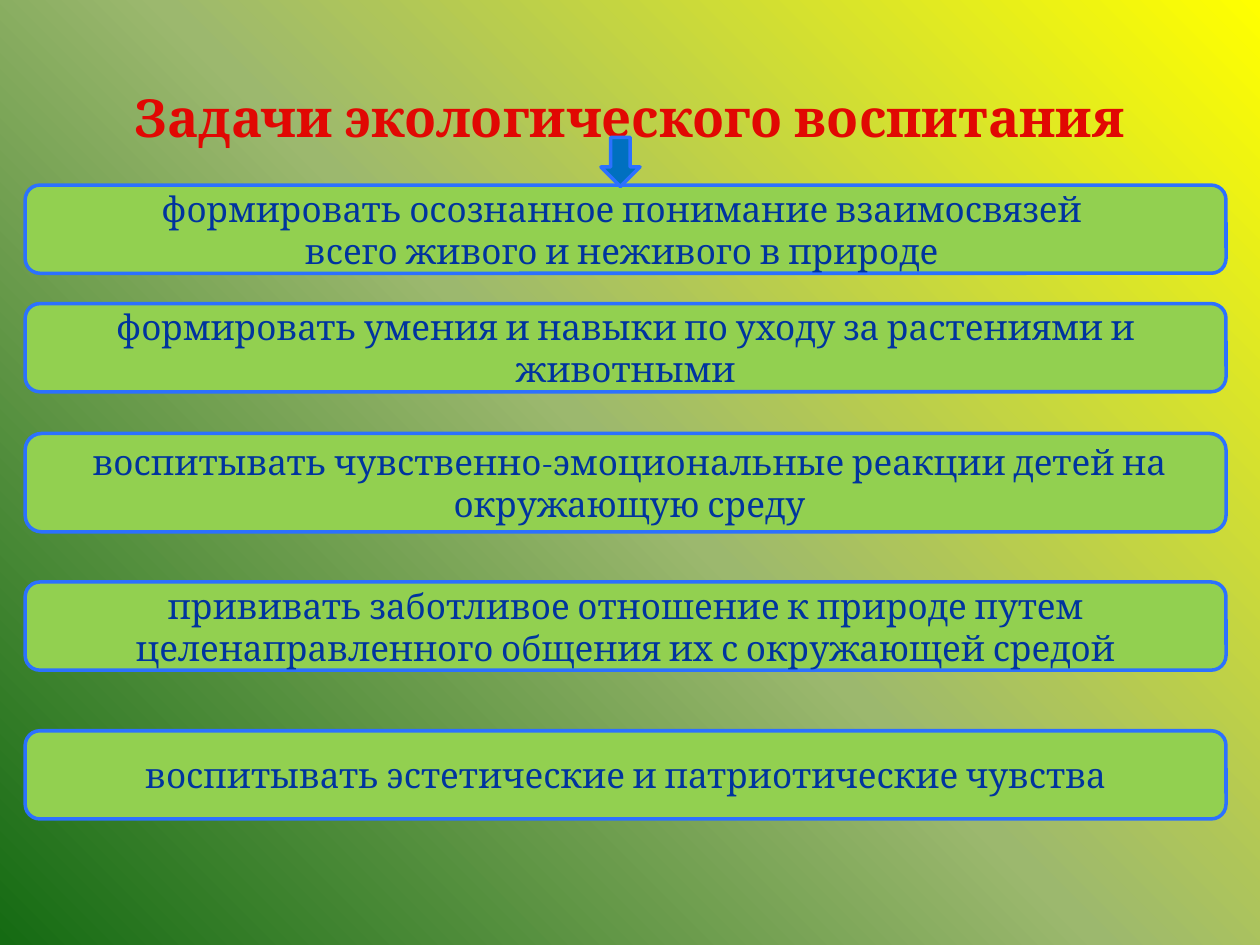
from copy import deepcopy

from pptx import Presentation
from pptx import util as u
from pptx.dml.color import RGBColor
from pptx.enum import shapes, text
from pptx.oxml.ns import qn

TITLE_FORMAT = {"name": "Cambria", "size": u.Pt(30), "bold": True}
TASK_FORMAT = {"name": "Cambria", "size": u.Pt(20), "bold": False}

LEFT, WIDTH = 14.4, 686.2
TASKS = [  # top, height, wording
    (105.8, 50.4, "формировать осознанное понимание взаимосвязей \n"
                  "всего живого и неживого в природе "),
    (173.5, 50.4, "формировать умения и навыки по уходу за растениями и животными"),
    (247.7, 56.2, " воспитывать чувственно-эмоциональные реакции детей на\n"
                  " окружающую среду"),
    (332.6, 50.4, "прививать заботливое отношение к природе путем "
                  "целенаправленного общения их с окружающей средой"),
    (417.6, 50.4, "воспитывать эстетические и патриотические чувства"),
]


def color(code):
    return RGBColor.from_string(code)


class SlideBuilder:
    title_color = "E10803"
    text_color = "00349E"
    line_color = "2C71FF"
    line_width = 2

    def __init__(self, page):
        self.page = page

    def background(self, stops, angle):
        """Fill the page with a gradient; the angle runs counter-clockwise."""
        fill = self.page.background.fill
        fill.gradient()
        fill.gradient_angle = angle
        stop_list = self.page.element.find(".//" + qn("a:gsLst"))
        while len(stop_list) < len(stops):
            stop_list.append(deepcopy(stop_list[0]))
        for stop, (position, code) in zip(fill.gradient_stops, stops):
            stop.position = position
            stop.color.rgb = color(code)

    def set_text(self, frame, wording, font_format, code):
        frame.text = wording
        frame.word_wrap = True
        frame.auto_size = text.MSO_AUTO_SIZE.NONE
        frame.vertical_anchor = text.MSO_ANCHOR.MIDDLE
        for para in frame.paragraphs:
            para.alignment = text.PP_ALIGN.CENTER
            for span in para.runs:
                for name, value in font_format.items():
                    setattr(span.font, name, value)
                span.font.color.rgb = color(code)

    def title(self, wording, left, top, width, height):
        box = self.page.shapes.title
        place = {"left": left, "top": top, "width": width, "height": height}
        for name, value in place.items():
            setattr(box, name, u.Pt(value))
        self.set_text(box.text_frame, wording, TITLE_FORMAT, self.title_color)

    def shape(self, kind, left, top, width, height, fill):
        box = self.page.shapes.add_shape(
            kind, u.Pt(left), u.Pt(top), u.Pt(width), u.Pt(height))
        box.shadow.inherit = False
        box.fill.solid()
        box.fill.fore_color.rgb = color(fill)
        box.line.color.rgb = color(self.line_color)
        box.line.width = u.Pt(self.line_width)
        return box

    def task(self, top, height, wording):
        box = self.shape(shapes.MSO_SHAPE.FLOWCHART_ALTERNATE_PROCESS,
                         LEFT, top, WIDTH, height, "92D050")
        self.set_text(box.text_frame, wording, TASK_FORMAT, self.text_color)

    def arrow(self, left, top, width, height):
        self.shape(shapes.MSO_SHAPE.DOWN_ARROW, left, top, width, height, "0070C0")


def main():
    deck = Presentation()
    deck.slide_width, deck.slide_height = u.Pt(720), u.Pt(540)
    title_only = deck.slide_layouts[5]
    builder = SlideBuilder(deck.slides.add_slide(title_only))
    builder.background([(0, "FFFF00"), (0.5, "9CB86E"), (1, "156B13")], 225)
    builder.title("Задачи экологического воспитания", 36, 21.6, 648, 90)
    for task in TASKS:
        builder.task(*task)
    builder.arrow(343.4, 78.5, 22.3, 28.1)
    deck.save("out.pptx")


if __name__ == "__main__":
    main()
